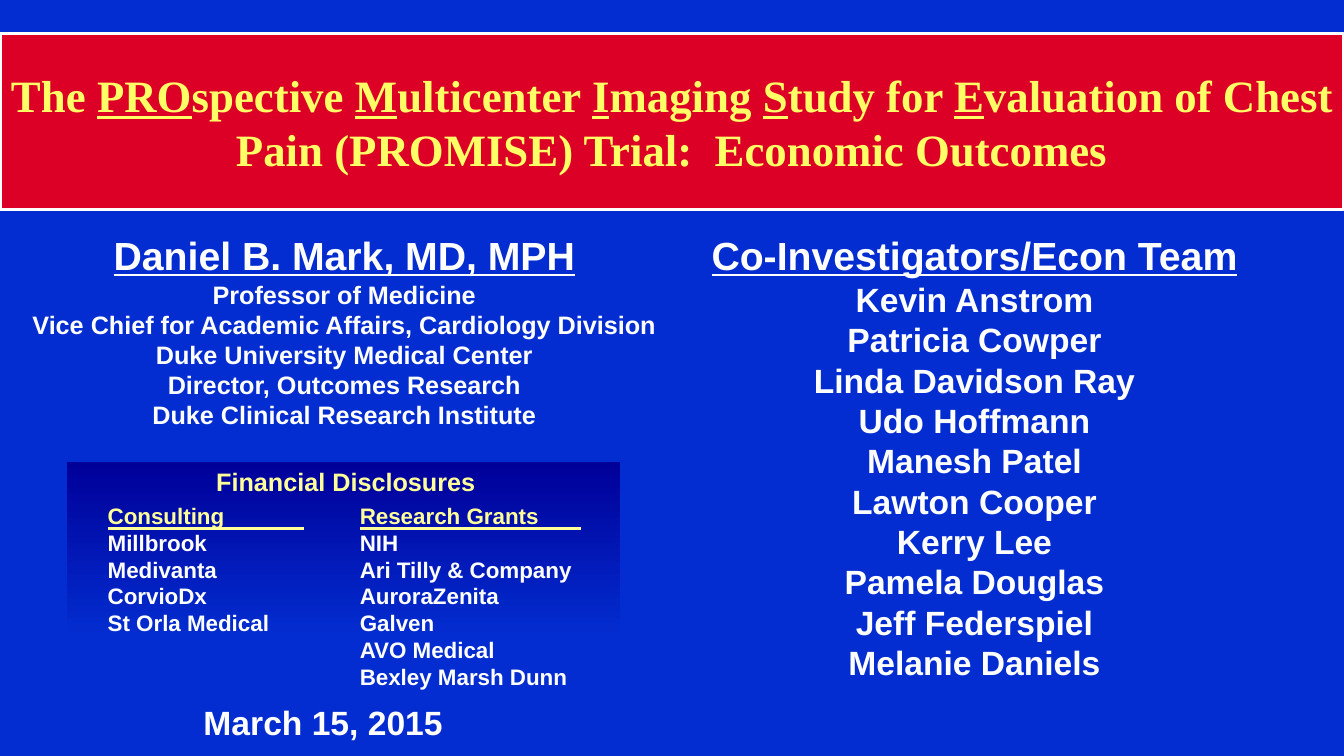
from lxml import etree
from pptx import Presentation
from pptx.dml.color import RGBColor
from pptx.enum.shapes import MSO_CONNECTOR, MSO_SHAPE
from pptx.enum.text import MSO_ANCHOR, PP_ALIGN
from pptx.oxml.ns import qn
from pptx.util import Inches, Pt

RECT = MSO_SHAPE.RECTANGLE
STRAIGHT = MSO_CONNECTOR.STRAIGHT
MIDDLE = MSO_ANCHOR.MIDDLE
LEFT, CENTER = PP_ALIGN.LEFT, PP_ALIGN.CENTER

COLORS = {"blue": "032DD0", "navy": "000099", "red": "DC0026",
          "white": "FFFFFF", "yellow": "FFFF66", "cream": "FFFF99"}

TITLE = [("The ", False), ("PRO", True), ("spective ", False), ("M", True),
         ("ulticenter ", False), ("I", True), ("maging ", False), ("S", True),
         ("tudy for ", False), ("E", True),
         ("valuation of Chest Pain (PROMISE) Trial:  Economic Outcomes", False)]
ROLES = ["Professor of Medicine",
         "Vice Chief for Academic Affairs, Cardiology Division",
         "Duke University Medical Center",
         "Director, Outcomes Research",
         "Duke Clinical Research Institute"]
TEAM = ["Kevin Anstrom", "Patricia Cowper", "Linda Davidson Ray",
        "Udo Hoffmann", "Manesh Patel", "Lawton Cooper", "Kerry Lee",
        "Pamela Douglas", "Jeff Federspiel", "Melanie Daniels"]
CLIENTS = ["Millbrook", "Medivanta", "CorvioDx", "St Orla Medical"]
GRANTS = ["NIH", "Ari Tilly & Company", "AuroraZenita", "Galven",
          "AVO Medical", "Bexley Marsh Dunn"]


def color(name):
    return RGBColor.from_string(COLORS[name])


def add_run(para, text, size, tint="white", face="Arial", under=False):
    run = para.add_run()
    run.text = text
    style = {"name": face, "size": Pt(size), "bold": True, "underline": under}
    for key, value in style.items():
        setattr(run.font, key, value)
    run.font.color.rgb = color(tint)


def add_text(slide, box, lines, align=LEFT):
    """Place one paragraph per (text, format) pair in the box."""
    frame = slide.shapes.add_textbox(*map(Inches, box)).text_frame
    frame.word_wrap = True
    for i, (text, form) in enumerate(lines):
        para = frame.add_paragraph() if i else frame.paragraphs[0]
        para.alignment = align
        add_run(para, text, **form)


def add_rect(slide, box):
    shape = slide.shapes.add_shape(RECT, *map(Inches, box))
    shape.shadow.inherit = False
    return shape


def add_rule(slide, left, top, width):
    ends = map(Inches, (left, top, left + width, top))
    rule = slide.shapes.add_connector(STRAIGHT, *ends)
    rule.line.color.rgb = color("cream")
    rule.line.width = Pt(2.25)
    etree.SubElement(rule._element.spPr, qn("a:effectLst"))


def add_banner(slide, box):
    shape = add_rect(slide, box)
    shape.fill.solid()
    shape.fill.fore_color.rgb = color("red")
    shape.line.color.rgb = color("white")
    shape.line.width = Pt(2.25)
    frame = shape.text_frame
    layout = {"word_wrap": True, "vertical_anchor": MIDDLE,
              "margin_left": Inches(0.05), "margin_right": Inches(0.05)}
    for key, value in layout.items():
        setattr(frame, key, value)
    para = frame.paragraphs[0]
    para.alignment = CENTER
    for text, under in TITLE:
        add_run(para, text, 32, "yellow", "Times New Roman", under)


def add_people(slide, box, head, names, size):
    """Place an underlined heading with centred lines below it."""
    lines = [(head, {"size": 28, "under": True})]
    lines += [(name, {"size": size}) for name in names]
    add_text(slide, box, lines, CENTER)


def add_funds(slide, box, head, names, rule):
    """Place a list of funders with a rule below its heading."""
    left, top = box[:2]
    lines = [(head, {"size": 16, "tint": "cream"})]
    lines += [(name, {"size": 16}) for name in names]
    add_text(slide, box, lines)
    add_rule(slide, left + 0.1, top + 0.31, rule)


def add_panel(slide, box):
    left, top = box[:2]
    panel = add_rect(slide, box)
    panel.fill.gradient()
    panel.fill.gradient_angle = 270
    for stop, name in zip(panel.fill.gradient_stops, ("navy", "blue")):
        stop.color.rgb = color(name)
    panel.line.fill.background()
    add_text(slide, (left + 1.37, top, 2.8, 0.4),
             [("Financial Disclosures", {"size": 18, "tint": "cream"})], CENTER)
    add_funds(slide, (left + 0.31, top + 0.35, 1.9, 1.45),
              "Consulting", CLIENTS, 1.95)
    add_funds(slide, (left + 2.81, top + 0.35, 2.45, 2.52),
              "Research Grants", GRANTS, 2.19)


def main():
    deck = Presentation()
    deck.slide_width, deck.slide_height = Inches(13.33), Inches(7.5)
    slide = deck.slides.add_slide(deck.slide_layouts[6])
    slide.background.fill.solid()
    slide.background.fill.fore_color.rgb = color("blue")
    add_panel(slide, (0.66, 4.58, 5.49, 1.74))
    add_banner(slide, (0, 0.33, 13.33, 1.75))
    add_people(slide, (0.08, 2.25, 6.67, 2.09),
               "Daniel B. Mark, MD, MPH", ROLES, 18)
    add_people(slide, (6.33, 2.25, 6.67, 4.61),
               "Co-Investigators/Econ Team", TEAM, 24)
    add_text(slide, (1.92, 6.91, 2.6, 0.5), [("March 15, 2015", {"size": 24})])
    deck.save("out.pptx")


if __name__ == "__main__":
    main()
